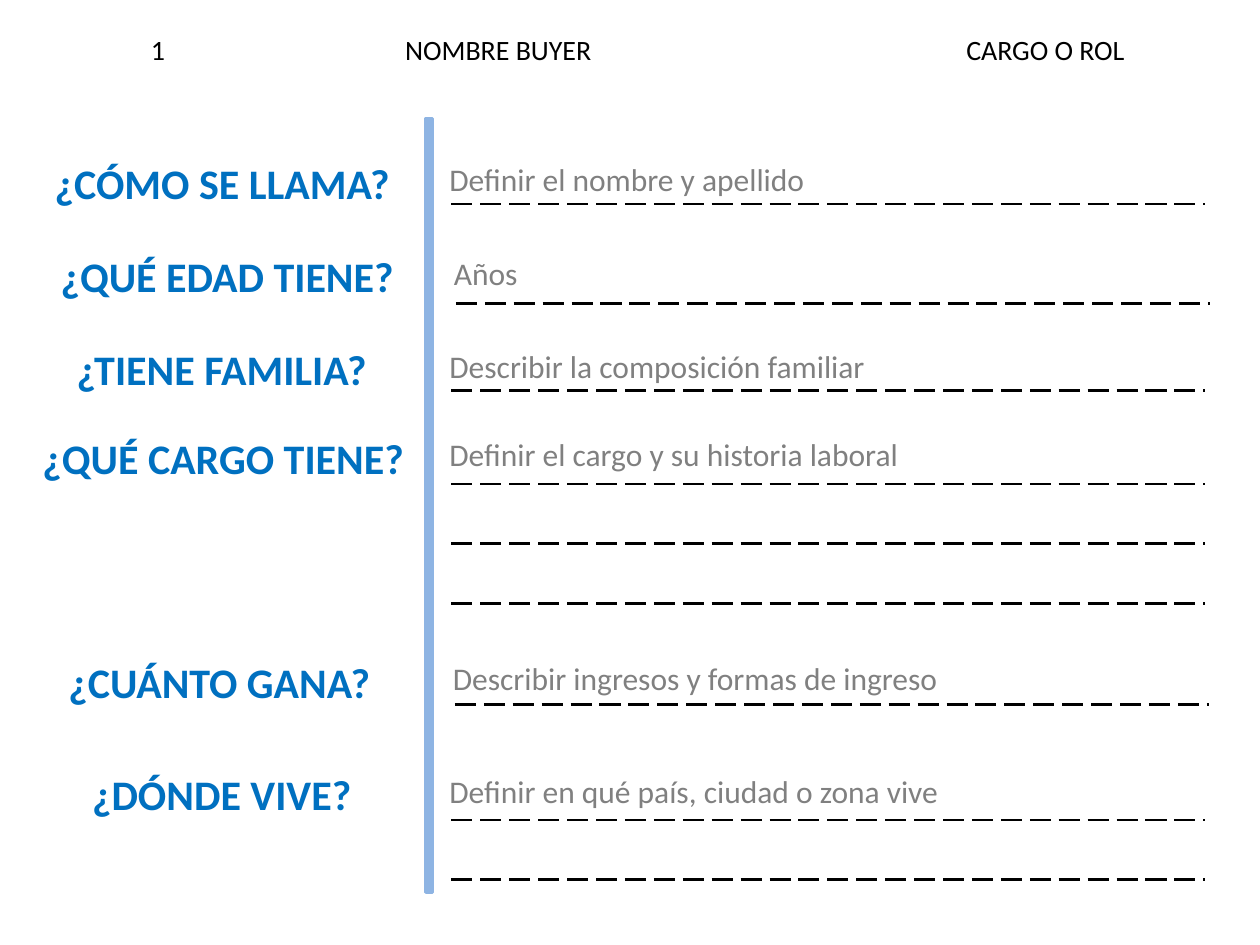
from dataclasses import dataclass

from lxml import etree
from pptx import Presentation
from pptx.dml.color import RGBColor
from pptx.enum.dml import MSO_LINE
from pptx.enum.shapes import MSO_CONNECTOR, MSO_SHAPE
from pptx.enum.text import MSO_AUTO_SIZE, PP_ALIGN
from pptx.oxml.ns import qn
from pptx.util import Cm, Pt

LONG_DASH = MSO_LINE.LONG_DASH
STRAIGHT = MSO_CONNECTOR.STRAIGHT
RECTANGLE = MSO_SHAPE.RECTANGLE
FIT_SHAPE = MSO_AUTO_SIZE.SHAPE_TO_FIT_TEXT
LEFT, CENTER = PP_ALIGN.LEFT, PP_ALIGN.CENTER


@dataclass(frozen=True)
class Theme:
    font: str = "Calibri"
    ink: RGBColor = RGBColor(0x00, 0x00, 0x00)
    question: RGBColor = RGBColor(0x00, 0x70, 0xC0)
    hint: RGBColor = RGBColor(0x80, 0x80, 0x80)
    divider: RGBColor = RGBColor(0x8E, 0xB4, 0xE3)
    header_size: int = 16
    question_size: int = 24
    hint_size: int = 18


class Sheet:
    def __init__(self, s, theme):
        self.s = s
        self.theme = theme

    def text(self, text, x, y, w, h, size, color, bold=False, align=LEFT, wrap=False):
        tf = self.s.shapes.add_textbox(Cm(x), Cm(y), Cm(w), Cm(h)).text_frame
        tf.word_wrap = wrap
        tf.auto_size = FIT_SHAPE
        tf.text = text
        p = tf.paragraphs[0]
        p.alignment = align
        font = p.runs[0].font
        font.name, font.size, font.bold = self.theme.font, Pt(size), bold
        font.color.rgb = color

    def header(self, text, x, w):
        self.text(text, x, 0.53, w, 0.94, self.theme.header_size, self.theme.ink)

    def question(self, text, center, y, w):
        self.text(text, center - w / 2, y, w, 1.27, self.theme.question_size,
                  self.theme.question, bold=True, align=CENTER)

    def hint(self, text, x, y):
        self.text(text, x, y, 15.19, 1.02, self.theme.hint_size,
                  self.theme.hint, wrap=True)

    def divider(self, x, y, w, h):
        sp = self.s.shapes.add_shape(RECTANGLE, Cm(x), Cm(y), Cm(w), Cm(h))
        sp.shadow.inherit = False
        sp.fill.solid()
        sp.fill.fore_color.rgb = self.theme.divider
        sp.line.color.rgb = self.theme.divider
        sp.line.width = Pt(2)

    def rules(self, x, y, count):
        shapes = self.s.shapes
        if count > 1:
            shapes = shapes.add_group_shape().shapes
        for i in range(count):
            rule_y = Cm(y + i * RULE_STEP)
            rule = shapes.add_connector(STRAIGHT, Cm(x), rule_y, Cm(x + 15.2), rule_y)
            rule.line.color.rgb = self.theme.ink
            rule.line.width = Pt(1.5)
            rule.line.dash_style = LONG_DASH
            etree.SubElement(rule._element.spPr, qn("a:effectLst"))


RULE_STEP = 1.2
ANSWER_X = 8.81
RULE_INDENT = 0.29

HEADERS = [("1", 2.79, 0.81), ("NOMBRE BUYER", 7.92, 4.32), ("CARGO O ROL", 19.23, 3.76)]

# question, center, top, width, hint, answer shift, first rule, rule count
ROWS = [
    ("¿CÓMO SE LLAMA?", 4.48, 3.05, 7.34, "Definir el nombre y apellido", 0, 4.11, 1),
    ("¿QUÉ EDAD TIENE?", 4.58, 4.93, 7.29, "Años", 0.09, 6.12, 1),
    ("¿TIENE FAMILIA?", 4.47, 6.81, 6.4, "Describir la composición familiar", 0, 7.87, 1),
    ("¿QUÉ CARGO TIENE?", 4.5, 8.59, 7.87, "Definir el cargo y su historia laboral", 0, 9.76, 3),
    ("¿CUÁNTO GANA?", 4.42, 13.11, 6.65, "Describir ingresos y formas de ingreso", 0.07, 14.2, 1),
    ("¿DÓNDE VIVE?", 4.47, 15.37, 5.79, "Definir en qué país, ciudad o zona vive", 0, 16.53, 2),
]


def main():
    prs = Presentation()
    prs.slide_width, prs.slide_height = Cm(25.4), Cm(19.05)
    sheet = Sheet(prs.slides.add_slide(prs.slide_layouts[6]), Theme())

    for text, x, w in HEADERS:
        sheet.header(text, x, w)
    sheet.divider(8.59, 2.39, 0.13, 15.6)
    for question, center, y, w, hint, shift, rule_y, count in ROWS:
        x = ANSWER_X + shift
        sheet.question(question, center, y, w)
        sheet.rules(x + RULE_INDENT, rule_y, count)
        sheet.hint(hint, x, y + 0.06)

    prs.save("out.pptx")


if __name__ == "__main__":
    main()
